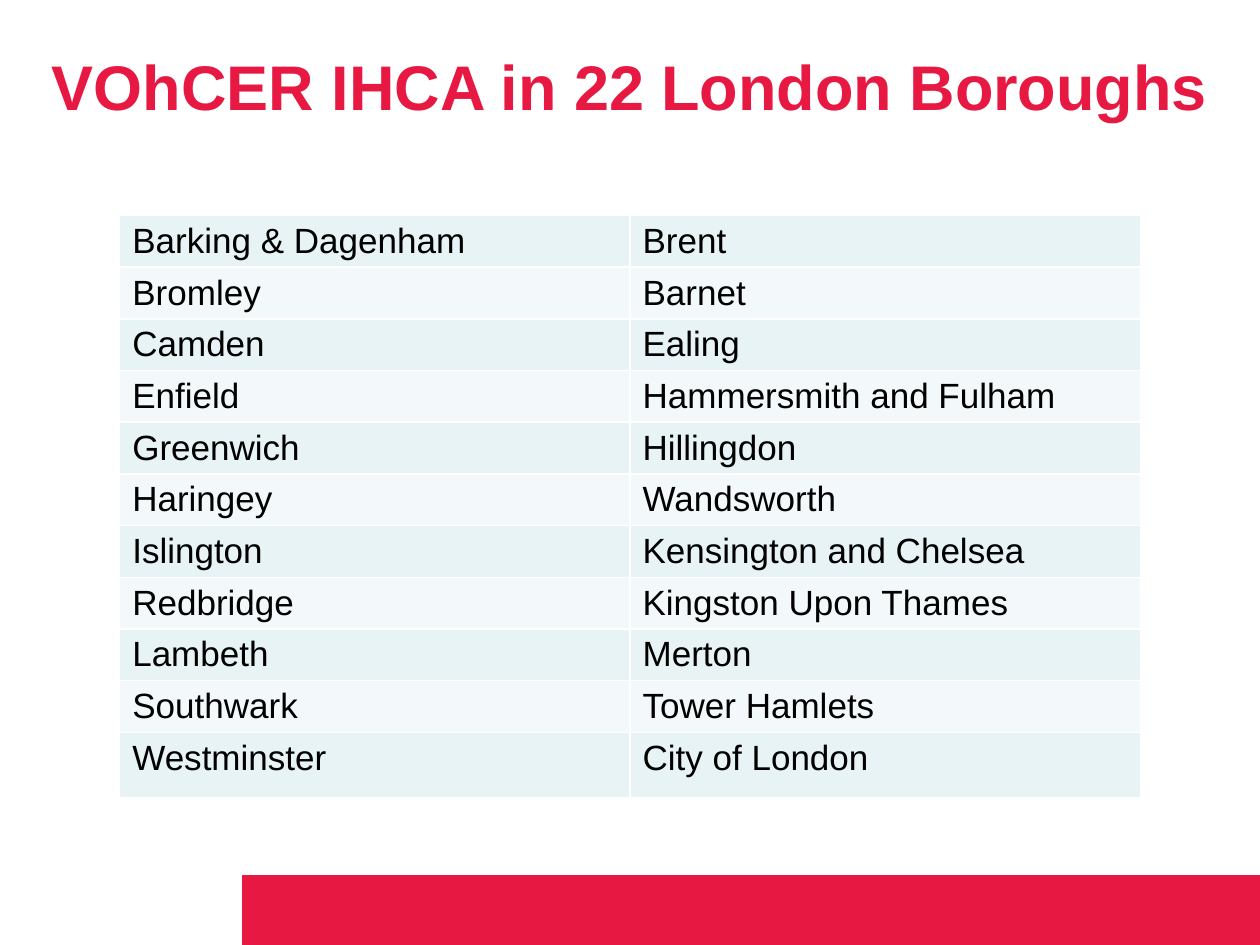
from lxml import etree
from pptx import Presentation
from pptx import util as u
from pptx.dml.color import RGBColor
from pptx.enum import shapes, text
from pptx.oxml.ns import qn

RED, WHITE, BLACK = "E71842", "FFFFFF", "000000"
BANDS = ["E7F3F4", "F3F9FA"]
BOROUGHS = [
    ("Barking & Dagenham", "Brent"),
    ("Bromley", "Barnet"),
    ("Camden", "Ealing"),
    ("Enfield", "Hammersmith and Fulham"),
    ("Greenwich", "Hillingdon"),
    ("Haringey", "Wandsworth"),
    ("Islington", "Kensington and Chelsea"),
    ("Redbridge", "Kingston Upon Thames"),
    ("Lambeth", "Merton"),
    ("Southwark", "Tower Hamlets"),
    ("Westminster", "City of London"),
]
HEADER_ROW, BODY_ROW, LAST_ROW = 0.32, 0.41, 0.52
COLUMN = 4.05


def paint(fill, colour):
    fill.solid()
    fill.fore_color.rgb = RGBColor.from_string(colour)


def style_cell(cell, colour):
    """Fill a cell and give it thin white borders."""
    properties = cell._tc.get_or_add_tcPr()
    for side in ("a:lnL", "a:lnR", "a:lnT", "a:lnB"):
        border = etree.SubElement(properties, qn(side), w=str(u.Pt(1)))
        border_fill = etree.SubElement(border, qn("a:solidFill"))
        etree.SubElement(border_fill, qn("a:srgbClr"), val=WHITE)
    paint(cell.fill, colour)


deck = Presentation()
deck.slide_width, deck.slide_height = u.Inches(10), u.Inches(7.5)
slide = deck.slides.add_slide(deck.slide_layouts[5])

# Heading
heading = slide.shapes.title
heading.left, heading.top = u.Inches(0.08), u.Inches(0.28)
heading.width, heading.height = u.Inches(9.84), u.Inches(0.98)
frame = heading.text_frame
frame.text = "VOhCER IHCA in 22 London Boroughs"
frame_format = {
    "auto_size": text.MSO_AUTO_SIZE.NONE,
    "vertical_anchor": text.MSO_ANCHOR.TOP,
    "margin_top": u.Inches(0.1),
    "word_wrap": True,
}
for name, value in frame_format.items():
    setattr(frame, name, value)
frame.paragraphs[0].alignment = text.PP_ALIGN.CENTER
heading_font = frame.paragraphs[0].runs[0].font
for name, value in {"name": "Arial", "size": u.Pt(36), "bold": True}.items():
    setattr(heading_font, name, value)
paint(heading_font.fill, RED)

# Footer band, running to the right and bottom edges
footer = slide.shapes.add_shape(
    shapes.MSO_SHAPE.RECTANGLE,
    u.Inches(1.93), u.Inches(6.95), u.Inches(8.07), u.Inches(0.55))
footer.shadow.inherit = False
paint(footer.fill, RED)
paint(footer.line.fill, RED)
footer.line.width = u.Pt(0.75)

# Boroughs under an empty merged header row
row_heights = [HEADER_ROW] + [BODY_ROW] * (len(BOROUGHS) - 1) + [LAST_ROW]
boroughs = slide.shapes.add_table(
    len(row_heights), 2, u.Inches(0.95), u.Inches(1.39),
    u.Inches(2 * COLUMN), u.Inches(sum(row_heights))).table
for column in boroughs.columns:
    column.width = u.Inches(COLUMN)
for row, height in zip(boroughs.rows, row_heights):
    row.height = u.Inches(height)

for header in boroughs.rows[0].cells:
    header.margin_top = header.margin_bottom = 0
    style_cell(header, WHITE)
boroughs.cell(0, 0).merge(boroughs.cell(0, 1))

for r, pair in enumerate(BOROUGHS):
    for c, borough in enumerate(pair):
        cell = boroughs.cell(r + 1, c)
        style_cell(cell, BANDS[r % 2])
        cell.text = borough
        font = cell.text_frame.paragraphs[0].runs[0].font
        for name, value in {"name": "Arial", "size": u.Pt(20), "bold": False}.items():
            setattr(font, name, value)
        paint(font.fill, BLACK)

deck.save("out.pptx")
